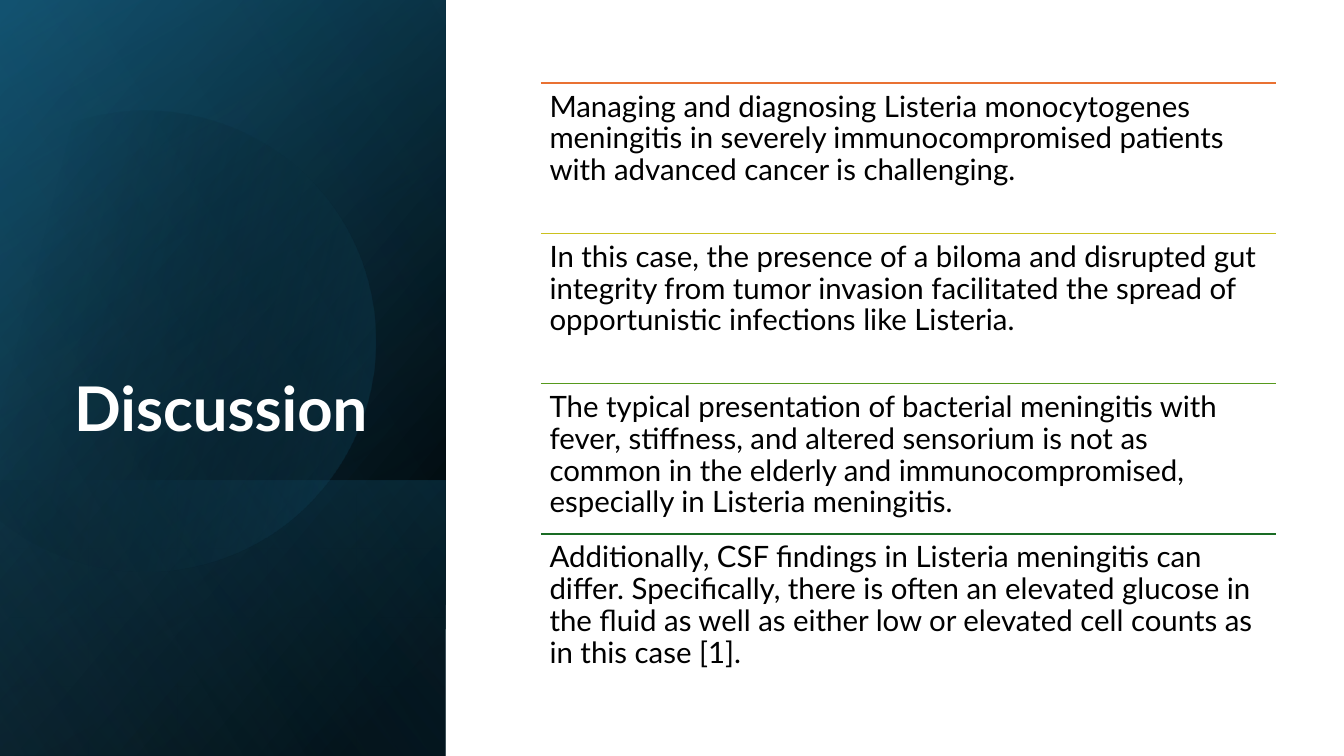
from math import cos, radians, sin, tan
from lxml.etree import SubElement
from pptx import Presentation
from pptx.dml.color import RGBColor
from pptx.enum.shapes import MSO_CONNECTOR, MSO_SHAPE
from pptx.enum.text import MSO_ANCHOR
from pptx.oxml.ns import qn
from pptx.util import Cm, Pt

FONT = "Lato"
POINTS = [
    ("E97132", "Managing and diagnosing Listeria monocytogenes meningitis in severely "
     "immunocompromised patients with advanced cancer is challenging."),
    ("CBC11E", "In this case, the presence of a biloma and disrupted gut integrity from "
     "tumor invasion facilitated the spread of opportunistic infections like Listeria."),
    ("56991D", "The typical presentation of bacterial meningitis with fever, stiffness, and "
     "altered sensorium is not as common in the elderly and immunocompromised, "
     "especially in Listeria meningitis."),
    ("196B24", "Additionally, CSF findings in Listeria meningitis can differ. Specifically, "
     "there is often an elevated glucose in the fluid as well as either low or "
     "elevated cell counts as in this case [1]."),
]


def color(code):
    return RGBColor.from_string(code)


def shade(shape, angle, stops):
    """Gradient fill; each stop is (position %, colour, opacity %)."""
    shape.shadow.inherit = False
    shape.line.fill.background()
    shape.fill.gradient()
    grad = shape._element.spPr.find(qn("a:gradFill"))
    for child in list(grad):
        grad.remove(child)
    grad.set("rotWithShape", "1")
    group = SubElement(grad, qn("a:gsLst"))
    for pos, code, alpha in stops:
        stop = SubElement(group, qn("a:gs"), pos=str(pos * 1000))
        tint = SubElement(stop, qn("a:srgbClr"), val=code)
        if alpha < 100:
            SubElement(tint, qn("a:alpha"), val=str(alpha * 1000))
    SubElement(grad, qn("a:lin"), ang=str(angle * 60000), scaled="0")


def layer(slide, left, top, width, height, angle, stops):
    """Mirrored rectangle turned by 90 degrees that covers the given box."""
    shift = (width - height) / 2
    shape = slide.shapes.add_shape(
        MSO_SHAPE.RECTANGLE, Cm(left + shift), Cm(top - shift), Cm(height), Cm(width))
    shape.rotation = 90
    shape._element.spPr.find(qn("a:xfrm")).set("flipH", "1")
    shade(shape, angle, stops)


def disc(slide, x, y, radius):
    """Tilted circle cut off by a chord on its left."""
    def spot(angle, pull=0.0):
        turn = radians(angle)
        return (Cm(x + radius * (cos(turn) - pull * sin(turn))),
                Cm(y + radius * (sin(turn) + pull * cos(turn))))

    # Each arc takes two control points and an end point
    stops = [-118, -90, 0, 90, 150]
    dots = []
    for a, b in zip(stops, stops[1:]):
        pull = 4 / 3 * tan(radians(b - a) / 4)
        dots += [spot(a, pull), spot(b, -pull), spot(b)]
    path = slide.shapes.build_freeform(*spot(stops[0]))
    path.add_line_segments(dots, close=True)
    shape = path.convert_to_shape()

    # Turn each three line segments into one curve
    lines = list(shape._element.spPr.iter(qn("a:lnTo")))
    for i in range(0, len(dots), 3):
        curve = lines[i]
        curve.tag = qn("a:cubicBezTo")
        for line in lines[i + 1:i + 3]:
            curve.append(line[0])
            line.getparent().remove(line)
    shape.rotation = 343.9
    shade(shape, 30, [(29, "000000", 0), (100, "156082", 43)])


def write(slide, left, top, width, height, text, size, code):
    box = slide.shapes.add_textbox(Cm(left), Cm(top), Cm(width), Cm(height))
    frame = box.text_frame
    frame.word_wrap = True
    frame.text = text
    para = frame.paragraphs[0]
    para.line_spacing = 0.9
    font = para.runs[0].font
    font.name, font.size, font.color.rgb = FONT, Pt(size), color(code)
    return frame


def panel(slide, left, top, width, height):
    # Gradient layers
    full = (left, top, width, height)
    low = 6.95
    layer(slide, *full, 50, [(8, "000000", 100), (100, "104862", 100)])
    layer(slide, *full, 30, [(0, "000000", 0), (99, "156082", 46)])
    layer(slide, left, top + height - low, width, low, 130,
          [(2, "156082", 29), (100, "000000", 30)])
    disc(slide, left + 3.64, top + 8.49, 5.8)
    layer(slide, *full, 120, [(0, "000000", 0), (99, "46B1E1", 11)])

    # Title
    frame = write(slide, left + 1.62, top + 4.68, 8.66, 6.65, "Discussion", 44, "FFFFFF")
    frame.vertical_anchor = MSO_ANCHOR.BOTTOM
    frame.paragraphs[0].runs[0].font.bold = True


def rows(slide, left, top, width, height):
    step = height / len(POINTS)
    for i, (code, text) in enumerate(POINTS):
        y = top + i * step
        # Rule above the row
        rule = slide.shapes.add_connector(
            MSO_CONNECTOR.STRAIGHT, Cm(left), Cm(y), Cm(left + width), Cm(y))
        rule.line.color.rgb = color(code)
        rule.line.width = Pt(1)
        SubElement(rule._element.spPr, qn("a:effectLst"))
        # Row text
        frame = write(slide, left, y, width, step, text, 21, "000000")
        frame.margin_left = frame.margin_right = Cm(0.22)
        frame.margin_top = frame.margin_bottom = Cm(0.22)


def main():
    deck = Presentation()
    deck.slide_width, deck.slide_height = Cm(33.87), Cm(19.05)
    slide = deck.slides.add_slide(deck.slide_layouts[6])
    panel(slide, 0, 0, 11.23, 19.05)
    rows(slide, 13.63, 2.09, 18.53, 15.15)
    deck.save("out.pptx")


if __name__ == "__main__":
    main()
